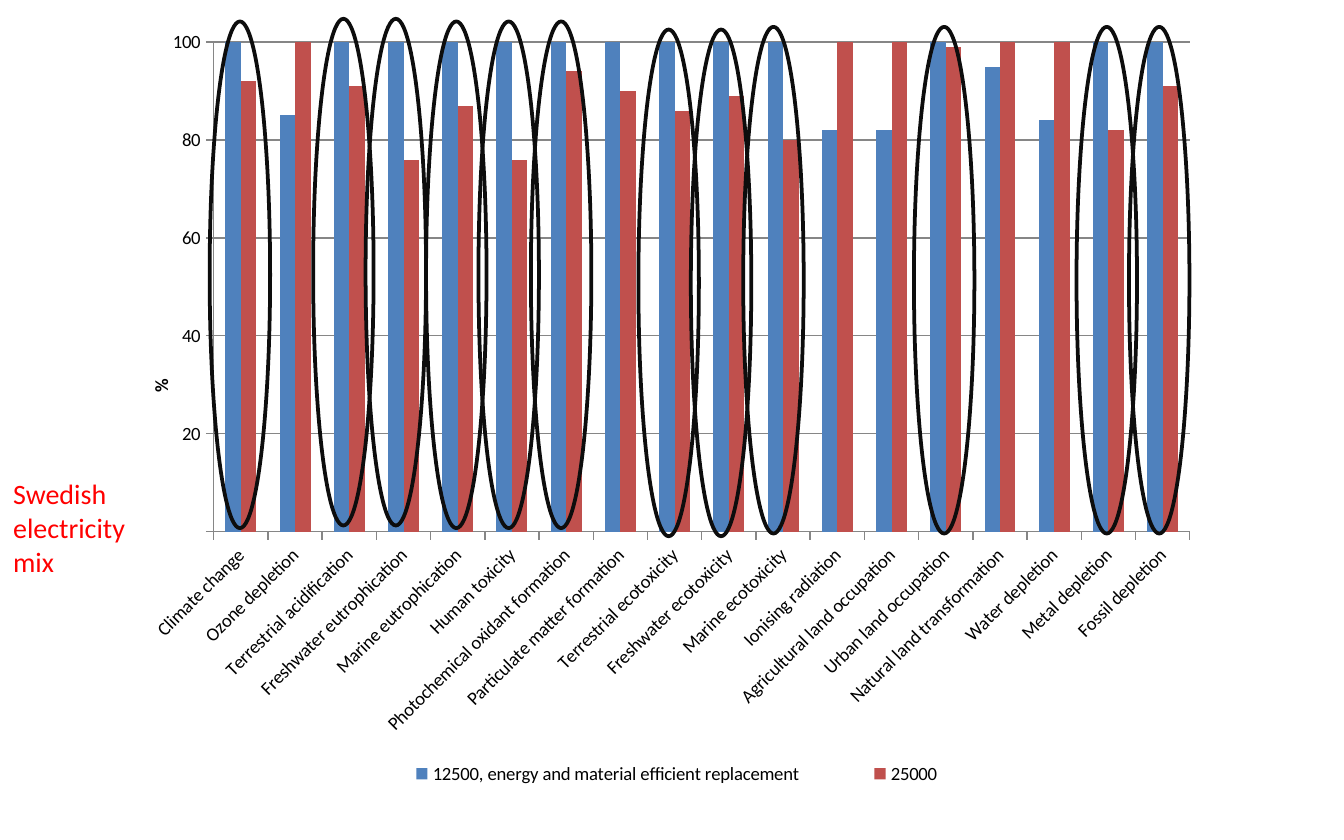
"""Build a slide comparing two product lifetimes by impact, with rings on the chart."""
from dataclasses import dataclass
from typing import Any

from lxml.etree import SubElement
from pptx import Presentation
from pptx.chart.data import CategoryChartData
from pptx.dml.color import RGBColor
from pptx.enum.chart import XL_CHART_TYPE, XL_LEGEND_POSITION, XL_TICK_LABEL_POSITION, XL_TICK_MARK
from pptx.enum.shapes import MSO_SHAPE
from pptx.enum.text import MSO_AUTO_SIZE
from pptx.oxml.ns import qn
from pptx.util import Inches, Pt

COLS, ROWS = 1000, 625


@dataclass(frozen=True)
class Theme:
    """Colours, font and type sizes."""
    face: str = "Calibri"
    note: str = "FF0000"
    ink: str = "000000"
    ring: str = "0D0D0D"
    grid: str = "868686"
    small: int = 10
    large: int = 15


@dataclass(frozen=True)
class Box:
    """A place in grid columns and rows."""
    col: int
    row: int
    wide: int
    high: int

    def size(self) -> list[int]:
        """Return left, top, width and height as lengths."""
        return [Inches(n / 100) for n in (self.col, self.row, self.wide, self.high)]


@dataclass(frozen=True)
class Run:
    """Evenly spaced rings that start at one cell."""
    col: int
    row: int
    count: int


@dataclass(frozen=True)
class Series:
    """A named row of chart values with its colour."""
    name: str
    color: str
    vals: tuple[int, ...]


THEME = Theme()
NOTE = Box(0, 350, 117, 86)
CHART = Box(100, 18, 832, 581)
STEP, WIDE, HIGH = 39, 45, 377
RUNS = (Run(156, 16, 1), Run(233, 14, 2), Run(317, 16, 3), Run(475, 22, 2),
        Run(553, 20, 1), Run(680, 20, 1), Run(801, 20, 2))
CATS = ("Climate change", "Ozone depletion", "Terrestrial acidification",
        "Freshwater eutrophication", "Marine eutrophication", "Human toxicity",
        "Photochemical oxidant formation", "Particulate matter formation",
        "Terrestrial ecotoxicity", "Freshwater ecotoxicity", "Marine ecotoxicity",
        "Ionising radiation", "Agricultural land occupation", "Urban land occupation",
        "Natural land transformation", "Water depletion", "Metal depletion",
        "Fossil depletion")
SERIES = (
    Series("12500, energy and material efficient replacement", "4F81BD",
           (100, 85, 100, 100, 100, 100, 100, 100, 100, 100, 100, 82, 82, 100, 95, 84, 100, 100)),
    Series("25000", "C0504D",
           (92, 100, 91, 76, 87, 76, 94, 90, 86, 89, 80, 100, 100, 99, 100, 100, 82, 91)),
)


def style(font: Any, size: int, color: str, bold: bool = False) -> None:
    """Set the face, size, colour and weight of a font."""
    font.name, font.size, font.bold = THEME.face, Pt(size), bold
    font.color.rgb = RGBColor.from_string(color)


def write(frame: Any, text: str, **look: Any) -> None:
    """Put formatted text into a frame."""
    run = frame.paragraphs[0].add_run()
    run.text = text
    style(run.font, **look)


def place(host: Any, mark: str, **share: float) -> None:
    """Give a chart part a manual layout, ahead of the marked child."""
    for old in host.findall(qn("c:layout")):
        host.remove(old)
    root = SubElement(host, qn("c:layout"))
    host.find(qn(mark)).addprevious(root)
    part = SubElement(root, qn("c:manualLayout"))
    if mark == "c:barChart":
        SubElement(part, qn("c:layoutTarget")).set("val", "inner")
    for tag in ("xMode", "yMode"):
        SubElement(part, qn(f"c:{tag}")).set("val", "edge")
    for tag, val in share.items():
        SubElement(part, qn(f"c:{tag}")).set("val", str(val))


def turn(body: Any, angle: int) -> None:
    """Rotate the text of a chart part by degrees."""
    body.set("rot", str(angle * 60000))
    body.set("vert", "horz")


def draw_line(line: Any, color: str, width: float) -> None:
    """Set the colour and width of a line."""
    line.color.rgb = RGBColor.from_string(color)
    line.width = Pt(width)


def draw_axes(chart: Any) -> None:
    """Format both axes and the title of the value axis."""
    cat, val = chart.category_axis, chart.value_axis
    for axis in (cat, val):
        axis.major_tick_mark, axis.minor_tick_mark = XL_TICK_MARK.OUTSIDE, XL_TICK_MARK.NONE
        draw_line(axis.format.line, THEME.grid, 0.75)
        style(axis.tick_labels.font, THEME.small, THEME.ink)
    cat.tick_label_position = XL_TICK_LABEL_POSITION.LOW
    turn(cat._element.find(qn("c:txPr")).find(qn("a:bodyPr")), -45)
    val.minimum_scale, val.maximum_scale, val.major_unit = 0, 100, 20
    val.tick_labels.number_format = '0;-0;""'
    val.tick_labels.number_format_is_linked = False
    val.has_major_gridlines = True
    draw_line(val.major_gridlines.format.line, THEME.grid, 0.75)
    title = val.axis_title
    write(title.text_frame, "%", size=THEME.small, color=THEME.ink, bold=True)
    turn(title.text_frame._txBody.find(qn("a:bodyPr")), -90)
    place(title._element, "c:overlay", x=0.01, y=0.45)


def draw_chart(slide: Any) -> None:
    """Add the clustered column chart."""
    data = CategoryChartData()
    data.categories = CATS
    for item in SERIES:
        data.add_series(item.name, item.vals)
    chart = slide.shapes.add_chart(XL_CHART_TYPE.COLUMN_CLUSTERED, *CHART.size(), data).chart
    chart.has_title = False
    style(chart.font, THEME.small, THEME.ink)
    plot = chart.plots[0]
    plot.gap_width, plot.overlap, plot.vary_by_categories = 150, 0, False
    for bars, item in zip(plot.series, SERIES):
        bars.format.fill.solid()
        bars.format.fill.fore_color.rgb = RGBColor.from_string(item.color)
    draw_axes(chart)
    place(plot._element.getparent(), "c:barChart", x=0.071, y=0.023, w=0.873, h=0.627)
    chart.has_legend = True
    chart.legend.position = XL_LEGEND_POSITION.BOTTOM
    chart.legend.include_in_layout = False
    style(chart.legend.font, THEME.small, THEME.ink)
    place(chart.legend._element, "c:overlay", x=0.19, y=0.93, w=0.59, h=0.06)


def draw_rings(slide: Any) -> None:
    """Add the group of rings around the marked categories."""
    group = slide.shapes.add_group_shape()
    for run in RUNS:
        for i in range(run.count):
            box = Box(run.col + i * STEP, run.row, WIDE, HIGH)
            ring = group.shapes.add_shape(MSO_SHAPE.OVAL, *box.size())
            ring.shadow.inherit = False
            ring.fill.background()
            draw_line(ring.line, THEME.ring, 2)


def draw_note(slide: Any) -> None:
    """Add the red note at the left."""
    frame = slide.shapes.add_textbox(*NOTE.size()).text_frame
    frame.word_wrap = True
    frame.auto_size = MSO_AUTO_SIZE.SHAPE_TO_FIT_TEXT
    write(frame, "Swedish electricity mix", size=THEME.large, color=THEME.note)


def main() -> None:
    """Build and save the slide."""
    deck = Presentation()
    deck.slide_width, deck.slide_height = Inches(COLS / 100), Inches(ROWS / 100)
    slide = deck.slides.add_slide(deck.slide_layouts[6])
    draw_note(slide)
    draw_chart(slide)
    draw_rings(slide)
    deck.save("out.pptx")


if __name__ == "__main__":
    main()
